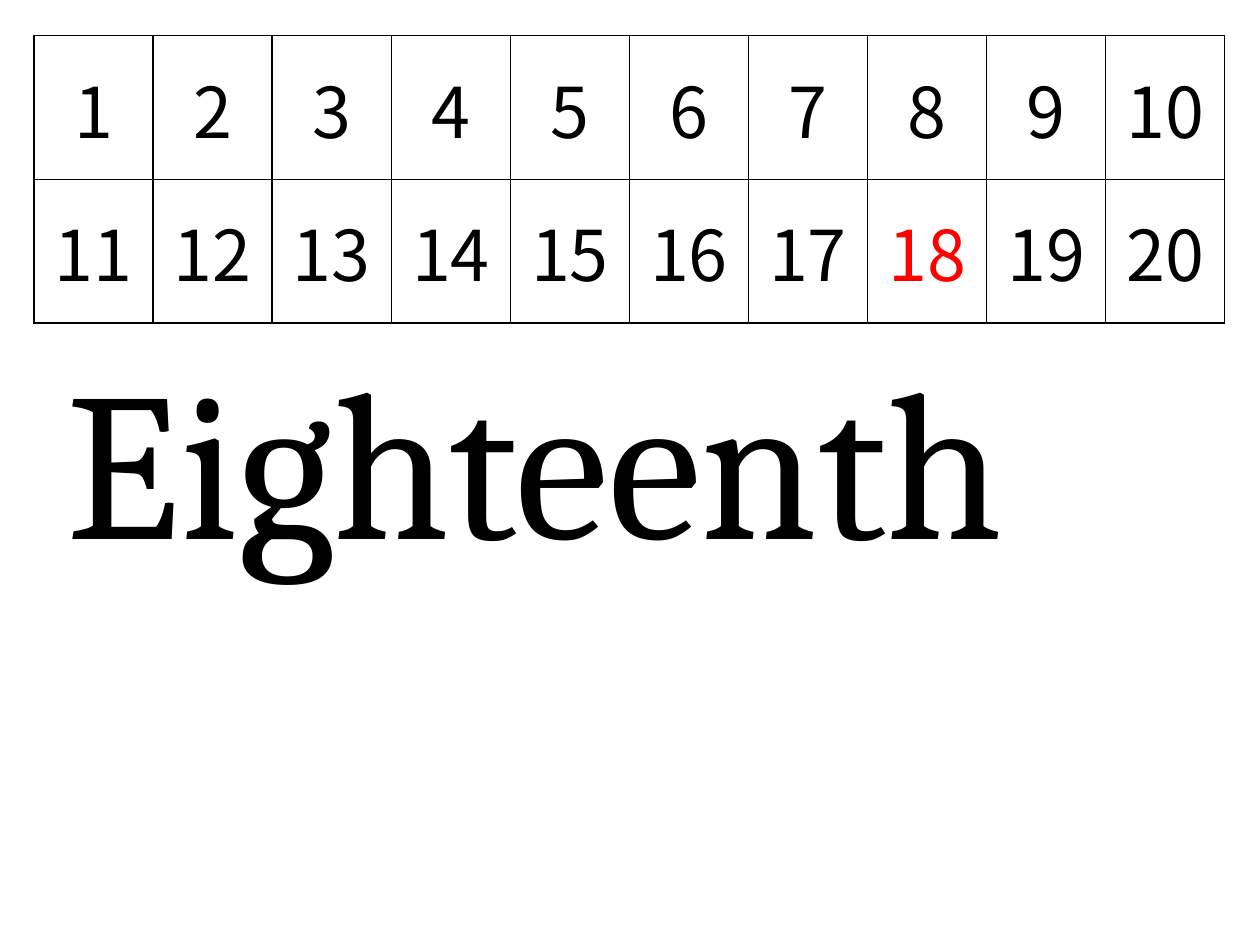
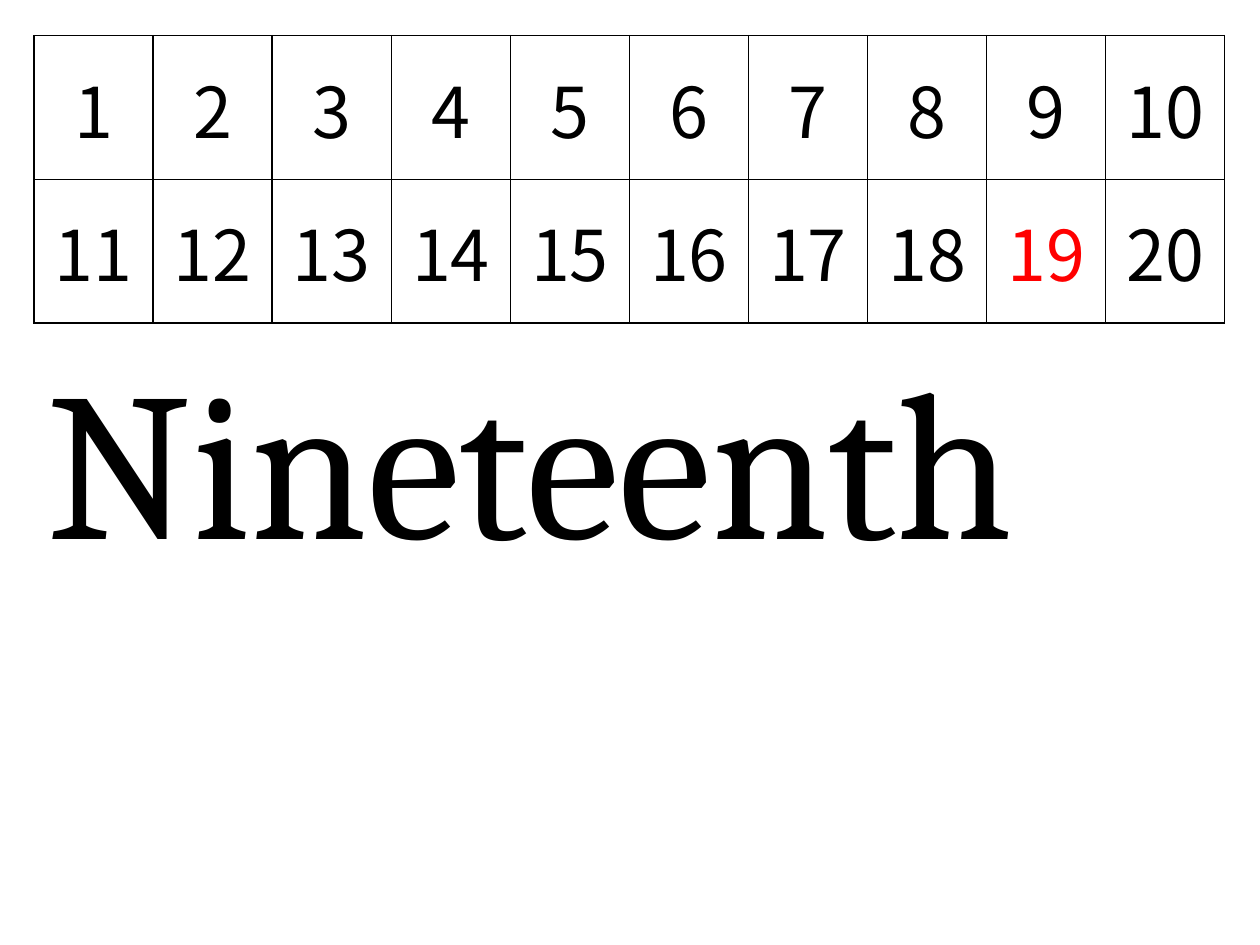
from dataclasses import dataclass

from lxml import etree
from pptx import Presentation
from pptx.dml.color import RGBColor
from pptx.enum.text import MSO_ANCHOR, MSO_AUTO_SIZE, PP_ALIGN
from pptx.oxml.ns import qn
from pptx.util import Pt

CENTER = PP_ALIGN.CENTER
MIDDLE = MSO_ANCHOR.MIDDLE
GROW = MSO_AUTO_SIZE.SHAPE_TO_FIT_TEXT

BLACK = RGBColor(0x00, 0x00, 0x00)
RED = RGBColor(0xFF, 0x00, 0x00)
NUMBER_FONT = "Noto Sans CJK JP"
WORD_FONT = "Cambria"

# Number grid, in points
ROWS, COLS = 2, 10
GRID_LEFT, GRID_TOP = 19.5, 20.4
CELL_W, CELL_H = 68.05, 82.1
WORD_TOP, WORD_H = 185, 152.6


@dataclass
class Ordinal:
    number: int
    word: str
    left: float
    width: float


ORDINALS = [
    Ordinal(18, "Eighteenth", 31, 643),
    Ordinal(19, "Nineteenth", 19.5, 649.5),
]


def style(p, font: str, size: float, color: RGBColor) -> None:
    p.font.name = font
    p.font.size = Pt(size)
    p.font.color.rgb = color


def add_borders(cell, width: float = 1) -> None:
    """Draw a solid black line on all four sides of a cell."""
    tc_pr = cell._tc.get_or_add_tcPr()
    for i, side in enumerate(("lnL", "lnR", "lnT", "lnB")):
        ln = etree.Element(qn(f"a:{side}"), w=str(Pt(width)))
        fill = etree.SubElement(ln, qn("a:solidFill"))
        etree.SubElement(fill, qn("a:srgbClr"), val=str(BLACK))
        tc_pr.insert(i, ln)


def add_number_grid(s, highlighted: int) -> None:
    table = s.shapes.add_table(ROWS, COLS, Pt(GRID_LEFT), Pt(GRID_TOP),
                               Pt(COLS * CELL_W), Pt(ROWS * CELL_H)).table
    table.first_row = table.horz_banding = False
    for row in table.rows:
        row.height = Pt(CELL_H)
    for column in table.columns:
        column.width = Pt(CELL_W)
    for number, cell in enumerate(table.iter_cells(), start=1):
        cell.fill.background()
        add_borders(cell)
        cell.vertical_anchor = MIDDLE
        cell.text = str(number)
        p = cell.text_frame.paragraphs[0]
        p.alignment = CENTER
        style(p, NUMBER_FONT, 40, RED if number == highlighted else BLACK)


def add_word(s, ordinal: Ordinal) -> None:
    sp = s.shapes.add_textbox(Pt(ordinal.left), Pt(WORD_TOP),
                              Pt(ordinal.width), Pt(WORD_H))
    tf = sp.text_frame
    tf.word_wrap = False
    tf.auto_size = GROW
    tf.text = ordinal.word
    style(tf.paragraphs[0], WORD_FONT, 120, BLACK)


def main() -> None:
    prs = Presentation()
    prs.slide_width, prs.slide_height = Pt(720), Pt(540)
    blank = prs.slide_layouts[6]
    for ordinal in ORDINALS:
        s = prs.slides.add_slide(blank)
        add_number_grid(s, ordinal.number)
        add_word(s, ordinal)
    prs.save("out.pptx")


if __name__ == "__main__":
    main()
